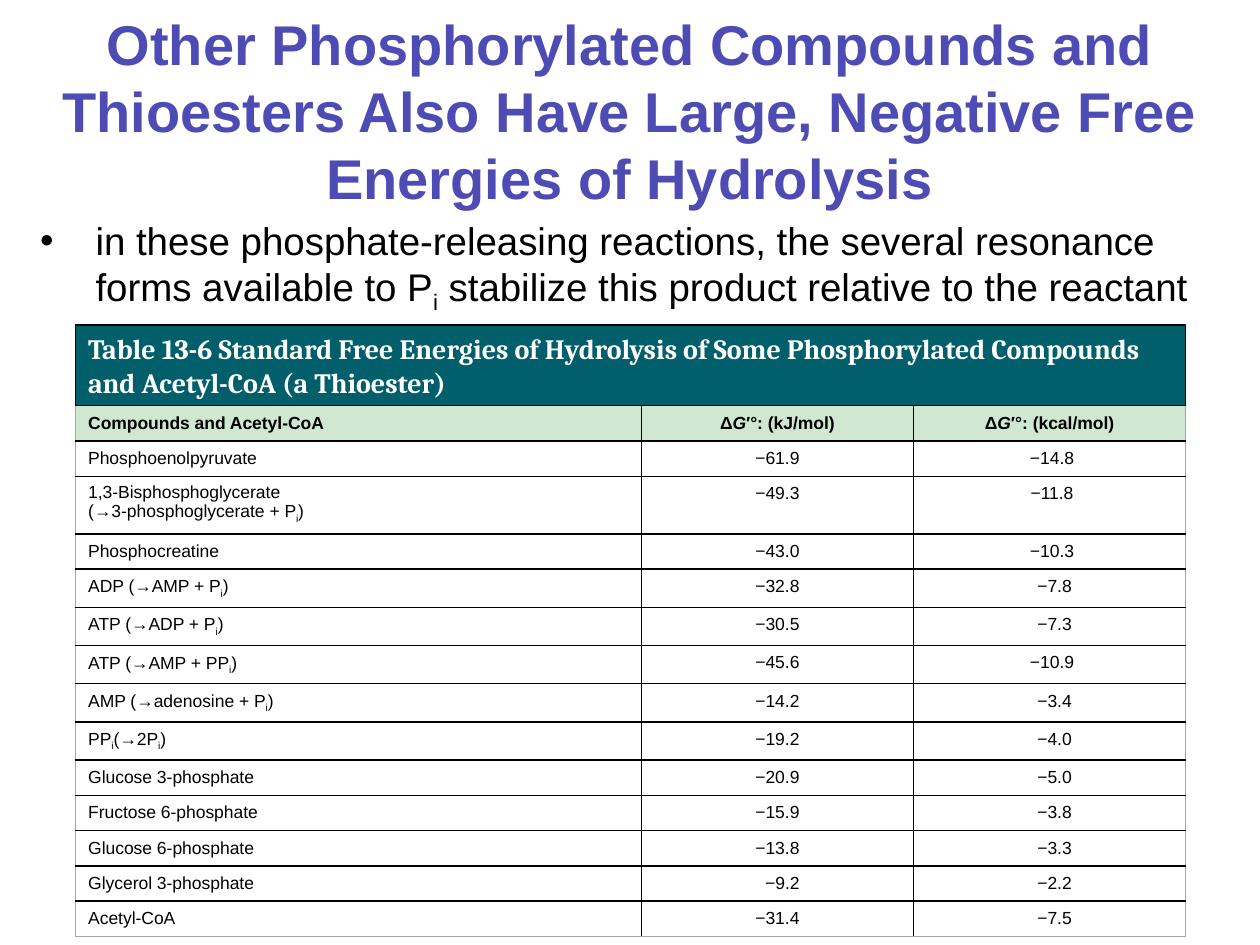
from dataclasses import dataclass
from pptx import Presentation
from pptx.dml.color import RGBColor as RGB
from pptx.enum.shapes import MSO_SHAPE as SHAPE
from pptx.enum.text import MSO_ANCHOR as ANCHOR, PP_ALIGN as ALIGN
from pptx.oxml import parse_xml
from pptx.oxml.ns import nsdecls
from pptx.util import Inches, Pt


@dataclass(frozen=True)
class Theme:
    font: str = "Arial"
    serif: str = "Cambria"
    title: str = "4E4CB4"
    ink: str = "000000"
    white: str = "FFFFFF"
    teal: str = "005F6A"
    mint: str = "D0E7D2"
    edge: str = "A6A6A6"
    big: int = 32
    body: int = 22
    band: int = 16
    small: int = 10


T = Theme()
LEFT, WIDTH = 0.6, 8.81
COLS = (4.49, 2.16, 2.16)
ROW, TALL = 0.28, 0.43
LEAD = 1.07

# ~ marks a subscript, * marks italics
HEAD = ("Compounds and Acetyl-CoA", "Δ*G*′°: (kJ/mol)", "Δ*G*′°: (kcal/mol)")
ROWS = (
    ("Phosphoenolpyruvate", "−61.9", "−14.8"),
    ("1,3-Bisphosphoglycerate\n(→3-phosphoglycerate + P~i~)", "−49.3", "−11.8"),
    ("Phosphocreatine", "−43.0", "−10.3"),
    ("ADP (→AMP + P~i~)", "−32.8", "−7.8"),
    ("ATP (→ADP + P~i~)", "−30.5", "−7.3"),
    ("ATP (→AMP + PP~i~)", "−45.6", "−10.9"),
    ("AMP (→adenosine + P~i~)", "−14.2", "−3.4"),
    ("PP~i~(→2P~i~)", "−19.2", "−4.0"),
    ("Glucose 3-phosphate", "−20.9", "−5.0"),
    ("Fructose 6-phosphate", "−15.9", "−3.8"),
    ("Glucose 6-phosphate", "−13.8", "−3.3"),
    ("Glycerol 3-phosphate", "−9.2", "−2.2"),
    ("Acetyl-CoA", "−31.4", "−7.5"),
)


def write(par, text, size, color=T.ink, font=T.font, bold=False):
    """Add marked-up text to a paragraph as runs."""
    look = {"name": font, "size": Pt(size), "bold": bold}
    for i, part in enumerate(text.split("*")):
        for j, piece in enumerate(part.split("~")):
            if not piece:
                continue
            run = par.add_run()
            run.text = piece
            for key, val in look.items():
                setattr(run.font, key, val)
            run.font.color.rgb = RGB.from_string(color)
            if i % 2:
                run.font.italic = True
            if j % 2:
                run.font._element.set("baseline", "-25000")


def add_text(slide, box, text, size, anchor=ANCHOR.TOP, align=ALIGN.LEFT, **look):
    frame = slide.shapes.add_textbox(*map(Inches, box)).text_frame
    frame.word_wrap = True
    frame.vertical_anchor = anchor
    par = frame.paragraphs[0]
    par.alignment = align
    write(par, text, size, **look)
    return par


def add_bullet(par):
    par.space_before = Pt(0.2 * T.body)
    props = par._p.get_or_add_pPr()
    props.set("marL", str(Inches(0.5)))
    props.set("indent", str(Inches(-0.44)))
    props.append(parse_xml(f'<a:buFont {nsdecls("a")} typeface="{T.font}"/>'))
    props.append(parse_xml(f'<a:buChar {nsdecls("a")} char="•"/>'))


def add_band(slide, box, text):
    band = slide.shapes.add_shape(SHAPE.RECTANGLE, *map(Inches, box))
    band.shadow.inherit = False
    band.fill.solid()
    band.fill.fore_color.rgb = RGB.from_string(T.teal)
    band.line.color.rgb = RGB.from_string(T.ink)
    band.line.width = Pt(0.75)
    frame = band.text_frame
    frame.word_wrap = True
    par = frame.paragraphs[0]
    par.alignment = ALIGN.LEFT
    write(par, text, T.band, T.white, T.serif, True)


def set_edges(cell, colors):
    props = cell._tc.get_or_add_tcPr()
    for side, color in zip("LRTB", colors):
        props.append(parse_xml(
            f'<a:ln{side} {nsdecls("a")} w="{Pt(1)}"><a:solidFill>'
            f'<a:srgbClr val="{color}"/></a:solidFill></a:ln{side}>'))


def fill_cell(cell, text, row, col):
    head = row == 0
    last = row == len(ROWS)
    set_edges(cell, (T.ink if col else T.edge,
                     T.edge if col == len(COLS) - 1 else T.ink,
                     T.ink, T.edge if last else T.ink))
    if head:
        cell.fill.solid()
        cell.fill.fore_color.rgb = RGB.from_string(T.mint)
    else:
        cell.fill.background()
        # shift short numbers right so that their decimals line up
        if col:
            shift = 0.08 if len(text) < 5 else 0.04 * (col - 1)
            cell.margin_left = Inches(0.1 + shift)
    frame = cell.text_frame
    lines = text.split("\n")
    for i, line in enumerate(lines):
        par = frame.add_paragraph() if i else frame.paragraphs[0]
        par.alignment = ALIGN.CENTER if col else ALIGN.LEFT
        if len(lines) == 1:
            par.line_spacing = LEAD
        write(par, line, T.small, bold=head)


def add_grid(slide, top):
    data = (HEAD,) + ROWS
    grid = slide.shapes.add_table(
        len(data), len(COLS), Inches(LEFT), Inches(top), Inches(WIDTH),
        Inches(ROW * len(data))).table
    grid.first_row = grid.horz_banding = False
    for col, width in zip(grid.columns, COLS):
        col.width = Inches(width)
    for r, texts in enumerate(data):
        grid.rows[r].height = Inches(TALL if "\n" in texts[0] else ROW)
        for c, text in enumerate(texts):
            fill_cell(grid.cell(r, c), text, r, c)


def main():
    deck = Presentation()
    deck.slide_width, deck.slide_height = Inches(10), Inches(7.5)
    slide = deck.slides.add_slide(deck.slide_layouts[6])
    add_text(slide, (0, 0, 10, 1.75),
             "Other Phosphorylated Compounds and Thioesters Also Have Large, "
             "Negative Free Energies of Hydrolysis",
             T.big, ANCHOR.MIDDLE, ALIGN.CENTER, color=T.title, bold=True)
    add_bullet(add_text(
        slide, (0.16, 1.67, 9.68, 2.19),
        "in these phosphate-releasing reactions, the several resonance forms "
        "available to P~i~ stabilize this product relative to the reactant", T.body))
    add_grid(slide, 3.22)
    add_band(slide, (LEFT, 2.58, WIDTH, 0.64),
             "Table 13-6 Standard Free Energies of Hydrolysis of Some "
             "Phosphorylated Compounds and Acetyl-CoA (a Thioester)")
    deck.save("out.pptx")


if __name__ == "__main__":
    main()
